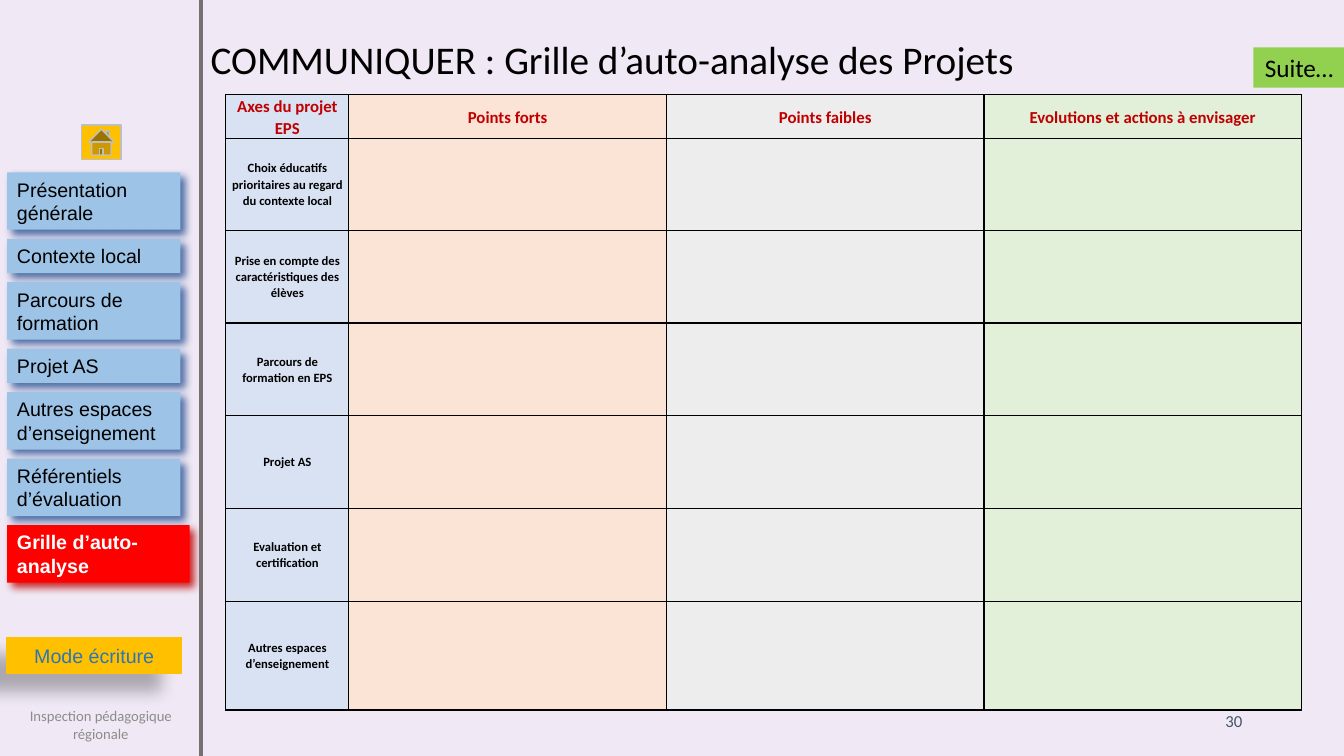
from lxml import etree
from pptx import Presentation
from pptx.dml.color import RGBColor
from pptx.enum.shapes import MSO_CONNECTOR, MSO_SHAPE
from pptx.enum.text import MSO_ANCHOR, MSO_AUTO_SIZE, PP_ALIGN
from pptx.oxml import parse_xml
from pptx.oxml.ns import nsdecls, qn
from pptx.util import Inches, Pt

RECTANGLE = MSO_SHAPE.RECTANGLE
BLANK_BUTTON = MSO_SHAPE.ACTION_BUTTON_CUSTOM
HOME_BUTTON = MSO_SHAPE.ACTION_BUTTON_HOME
STRAIGHT = MSO_CONNECTOR.STRAIGHT
TOP, MIDDLE = MSO_ANCHOR.TOP, MSO_ANCHOR.MIDDLE
LEFT, CENTER, RIGHT = PP_ALIGN.LEFT, PP_ALIGN.CENTER, PP_ALIGN.RIGHT
NO_RESIZE = MSO_AUTO_SIZE.NONE

BLACK = RGBColor(0x00, 0x00, 0x00)
WHITE = RGBColor(0xFF, 0xFF, 0xFF)
LILAC = RGBColor(0xF0, 0xE9, 0xF5)
SKY = RGBColor(0x9D, 0xC3, 0xE6)
NAVY = RGBColor(0x2F, 0x55, 0x97)
RED = RGBColor(0xFF, 0x00, 0x00)
DARK_RED = RGBColor(0xC0, 0x00, 0x00)
AMBER = RGBColor(0xFF, 0xC0, 0x00)
BLUE = RGBColor(0x2E, 0x75, 0xB6)
LIME = RGBColor(0x92, 0xD0, 0x50)
SILVER = RGBColor(0xBF, 0xBF, 0xBF)
GRAY = RGBColor(0x76, 0x71, 0x71)
FOOTER_GRAY = RGBColor(0x8C, 0x8C, 0x8C)
SLATE = RGBColor(0x44, 0x54, 0x6A)
COLUMN_FILLS = [
    RGBColor(0xD9, 0xE2, 0xF3),
    RGBColor(0xFB, 0xE4, 0xD5),
    RGBColor(0xED, 0xED, 0xED),
    RGBColor(0xE2, 0xEF, 0xD9),
]

SIDEBAR_WIDTH = 1.99
MENU = [
    ("Présentation générale", 0.57),
    ("Contexte local", 0.34),
    ("Parcours de formation", 0.57),
    ("Projet AS", 0.34),
    ("Autres espaces d’enseignement", 0.57),
    ("Référentiels d’évaluation", 0.57),
    ("Grille d’auto-analyse", 0.57),
]
CURRENT = "Grille d’auto-analyse"
MENU_GAP = 0.09

HEADERS = ["Axes du projet EPS", "Points forts", "Points faibles",
           "Evolutions et actions à envisager"]
AXES = [
    "Choix éducatifs prioritaires au regard du contexte local",
    "Prise en compte des caractéristiques des élèves",
    "Parcours de formation en EPS",
    "Projet AS",
    "Evaluation et certification",
    "Autres espaces d’enseignement",
]
COLUMN_WIDTHS = [1.22, 3.15, 3.15, 3.15]
ROW_HEIGHTS = [0.43, 0.91, 0.92, 0.92, 0.92, 0.92, 1.08]


def write(frame, text, color, size, align=LEFT, font="Arial", bold=False):
    para = frame.paragraphs[0]
    para.alignment = align
    span = para.add_run()
    span.text = text
    for name, value in {"name": font, "size": Pt(size), "bold": bold}.items():
        setattr(span.font, name, value)
    span.font.color.rgb = color
    return para


def write_in_box(box, text, color, size, anchor=MIDDLE, wrap=True, **style):
    frame = box.text_frame
    settings = {"word_wrap": wrap, "auto_size": NO_RESIZE,
                "vertical_anchor": anchor}
    for name, value in settings.items():
        setattr(frame, name, value)
    write(frame, text, color, size, **style)


def add_text(page, area, text, color, size, **style):
    box = page.shapes.add_textbox(*map(Inches, area))
    write_in_box(box, text, color, size, font="Calibri", **style)


def add_panel(page, kind, area, fill):
    panel = page.shapes.add_shape(kind, *map(Inches, area))
    panel.shadow.inherit = False
    panel.fill.solid()
    panel.fill.fore_color.rgb = fill
    panel.line.fill.background()
    return panel


def cast_shadow(panel, color, opacity, blur, distance, angle):
    effects = panel._element.spPr.find(qn("a:effectLst"))
    effects.append(parse_xml(
        f'<a:outerShdw {nsdecls("a")} blurRad="{Pt(blur)}" dist="{Pt(distance)}"'
        f' dir="{angle * 60000}" algn="tl" rotWithShape="0">'
        f'<a:srgbClr val="{color}"><a:alpha val="{opacity * 1000}"/></a:srgbClr>'
        '</a:outerShdw>'))


def add_menu(page, left, top, width):
    for label, height in MENU:
        current = label == CURRENT
        area = (left, top, width + (0.09 if current else 0), height)
        panel = add_panel(page, RECTANGLE, area, RED if current else SKY)
        cast_shadow(panel, DARK_RED if current else NAVY, 84, 6, 5, 45)
        write_in_box(panel, label, WHITE if current else BLACK, 14, bold=current)
        top += height + MENU_GAP


def add_sidebar(page, width, height):
    # Home button and menu
    home = add_panel(page, HOME_BUTTON, (0.81, 1.24, 0.39, 0.34), AMBER)
    home.line.color.rgb = SILVER
    home.line.width = Pt(1)
    add_menu(page, 0.07, 1.71, 1.72)

    # Writing mode button and footer
    mode = add_panel(page, BLANK_BUTTON, (0.06, 6.32, 1.75, 0.37), AMBER)
    cast_shadow(mode, BLACK, 28, 11.8, 19.7, 141)
    write_in_box(mode, "Mode écriture", BLUE, 14, align=CENTER)
    add_text(page, (0.14, height - 0.48, 1.72, 0.34),
             "Inspection pédagogique régionale", FOOTER_GRAY, 10.5, align=CENTER)

    # Divider
    divider = page.shapes.add_connector(
        STRAIGHT, Inches(width), 0, Inches(width), Inches(height))
    divider.line.color.rgb = GRAY
    divider.line.width = Pt(3)
    etree.SubElement(divider._element.spPr, qn("a:effectLst"))


def add_heading(page, left):
    add_text(page, (left, 0.3, 10.92, 0.57),
             "COMMUNIQUER : Grille d’auto-analyse des Projets", BLACK, 28,
             anchor=TOP)
    more = add_panel(page, RECTANGLE, (12.43, 0.47, 0.91, 0.4), LIME)
    write_in_box(more, "Suite…", BLACK, 18, anchor=TOP, wrap=False,
                 align=CENTER, font="Calibri")


def style_cell(cell, fill):
    margins = {"margin_left": 0.06, "margin_right": 0.06,
               "margin_top": 0, "margin_bottom": 0}
    for name, value in margins.items():
        setattr(cell, name, Inches(value))
    cell.vertical_anchor = MIDDLE
    properties = cell._tc.get_or_add_tcPr()
    for side in ("lnL", "lnR", "lnT", "lnB"):
        properties.append(parse_xml(
            f'<a:{side} {nsdecls("a")} w="{Pt(1)}"><a:solidFill>'
            f'<a:srgbClr val="{BLACK}"/></a:solidFill></a:{side}>'))
    cell.fill.solid()
    cell.fill.fore_color.rgb = fill


def add_grid(page, left, top):
    area = (left, top, sum(COLUMN_WIDTHS), sum(ROW_HEIGHTS))
    table = page.shapes.add_table(len(ROW_HEIGHTS), len(COLUMN_WIDTHS),
                                  *map(Inches, area)).table
    table.first_row = table.horz_banding = False
    for column, width in zip(table.columns, COLUMN_WIDTHS):
        column.width = Inches(width)
    for row, height in zip(table.rows, ROW_HEIGHTS):
        row.height = Inches(height)

    rows = [HEADERS] + [[axis, "", "", ""] for axis in AXES]
    for row_index, labels in enumerate(rows):
        color, size = (BLACK, 9) if row_index else (DARK_RED, 12)
        for column_index, label in enumerate(labels):
            cell = table.cell(row_index, column_index)
            style_cell(cell, COLUMN_FILLS[column_index])
            if label:
                para = write(cell.text_frame, label, color, size, CENTER,
                             "Calibri", True)
                para.line_spacing = 1.07


def main():
    deck = Presentation()
    deck.slide_width, deck.slide_height = Inches(13.33), Inches(7.5)
    page = deck.slides.add_slide(deck.slide_layouts[6])
    page.background.fill.solid()
    page.background.fill.fore_color.rgb = LILAC

    add_heading(page, SIDEBAR_WIDTH)
    add_sidebar(page, SIDEBAR_WIDTH, 7.5)
    add_text(page, (11.94, 6.95, 0.48, 0.4), "30", SLATE, 12, align=RIGHT)
    add_grid(page, SIDEBAR_WIDTH + 0.25, 0.94)
    deck.save("out.pptx")


if __name__ == "__main__":
    main()
